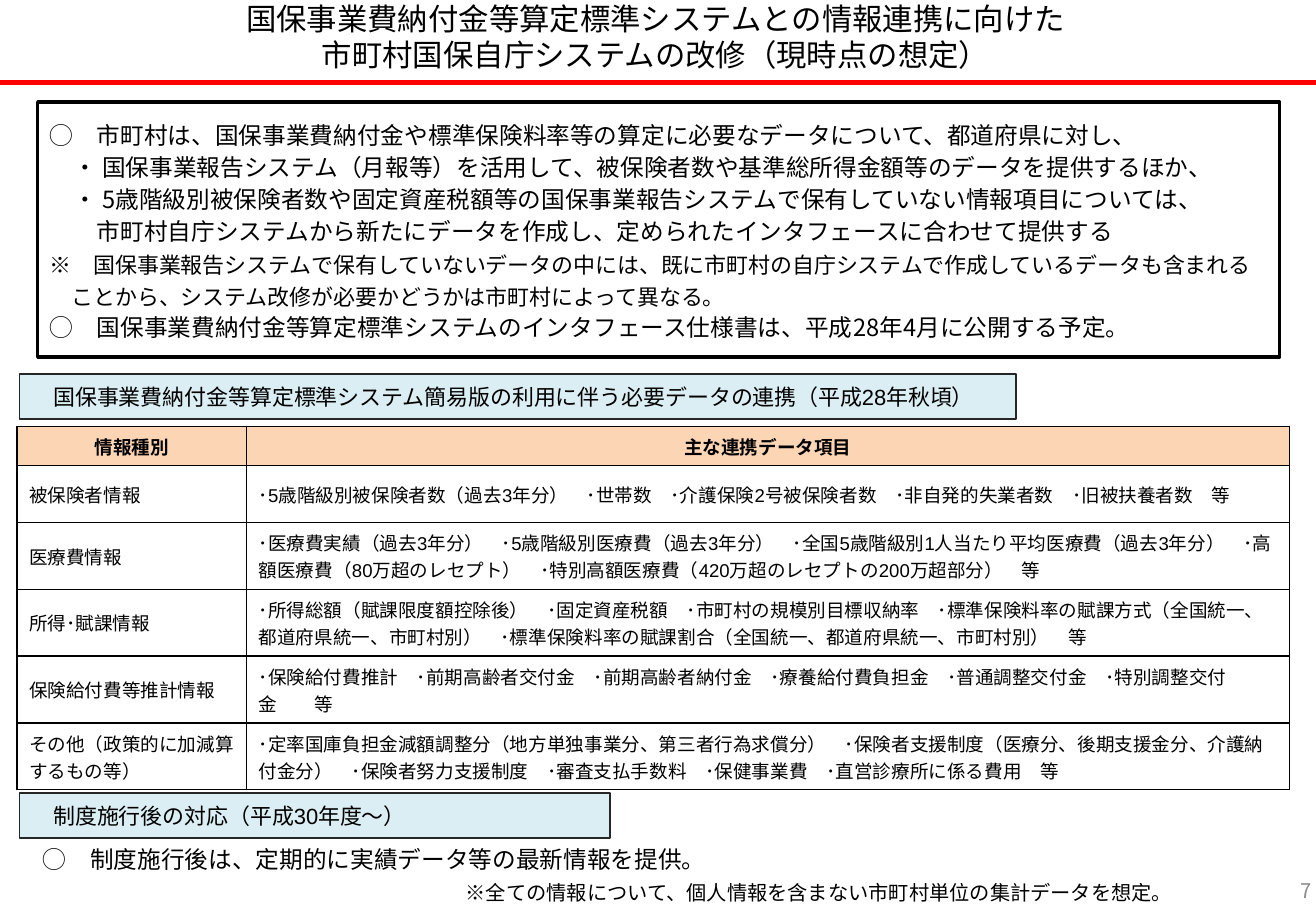
from lxml.etree import SubElement
from pptx import Presentation
from pptx.dml.color import RGBColor as Rgb
from pptx.enum.shapes import MSO_CONNECTOR as Connector, MSO_SHAPE as Shape
from pptx.enum.text import MSO_ANCHOR as Anchor, PP_ALIGN as Align
from pptx.oxml.ns import qn
from pptx.util import Inches, Pt

COLORS = {"black": "000000", "white": "FFFFFF", "red": "FF0000", "dark": "262626",
          "aqua": "DBEEF4", "peach": "FCD5B5", "gray": "8C8C8C"}
GOTHIC = "Noto Sans CJK JP"

SUMMARY = [  # text, size, first-line indent in characters, alignment
    ("◯　市町村は、国保事業費納付金や標準保険料率等の算定に必要なデータについて、都道府県に対し、", 14, 0, Align.LEFT),
    ("・ 国保事業報告システム（月報等）を活用して、被保険者数や基準総所得金額等のデータを提供するほか、", 14, 1, Align.LEFT),
    ("・ 5歳階級別被保険者数や固定資産税額等の国保事業報告システムで保有していない情報項目については、", 14, 1, Align.LEFT),
    ("市町村自庁システムから新たにデータを作成し、定められたインタフェースに合わせて提供する", 14, 2, Align.LEFT),
    ("※　国保事業報告システムで保有していないデータの中には、既に市町村の自庁システムで作成しているデータも含まれる", 13, 0, Align.JUSTIFY),
    ("ことから、システム改修が必要かどうかは市町村によって異なる。", 13, 1, Align.JUSTIFY),
    ("◯　国保事業費納付金等算定標準システムのインタフェース仕様書は、平成28年4月に公開する予定。", 14, 0, Align.JUSTIFY),
]
DATA_ITEMS = [
    ("情報種別", "主な連携データ項目"),
    ("被保険者情報", "･5歳階級別被保険者数（過去3年分）　･世帯数　･介護保険2号被保険者数　･非自発的失業者数　･旧被扶養者数　等"),
    ("医療費情報", "･医療費実績（過去3年分）　･5歳階級別医療費（過去3年分）　･全国5歳階級別1人当たり平均医療費（過去3年分）　･高額医療費（80万超のレセプト）　･特別高額医療費（420万超のレセプトの200万超部分）　等"),
    ("所得･賦課情報", "･所得総額（賦課限度額控除後）　･固定資産税額　･市町村の規模別目標収納率　･標準保険料率の賦課方式（全国統一、都道府県統一、市町村別）　･標準保険料率の賦課割合（全国統一、都道府県統一、市町村別）　等"),
    ("保険給付費等推計情報", "･保険給付費推計　･前期高齢者交付金　･前期高齢者納付金　･療養給付費負担金　･普通調整交付金　･特別調整交付金　　等"),
    ("その他（政策的に加減算するもの等）", "･定率国庫負担金減額調整分（地方単独事業分、第三者行為求償分）　･保険者支援制度（医療分、後期支援金分、介護納付金分）　･保険者努力支援制度　･審査支払手数料　･保健事業費　･直営診療所に係る費用　等"),
]


def write(paragraph, text, size=14, font=GOTHIC, asian_font=None, color="black",
          bold=False, align=Align.LEFT, indent=0, spacing=None):
    """Add formatted text; indent counts characters on the first line."""
    paragraph.alignment = align
    paragraph.line_spacing = Pt(spacing) if spacing else 1.0
    paragraph.space_before = Pt(0)
    properties = paragraph._p.get_or_add_pPr()
    properties.set("marL", "0")
    properties.set("indent", str(Pt(size * indent)))
    run = paragraph.add_run()
    run.text = text
    run.font.size, run.font.bold, run.font.name = Pt(size), bold, font
    run.font.color.rgb = Rgb.from_string(COLORS[color])
    SubElement(run._r.get_or_add_rPr(), qn("a:ea"), typeface=asian_font or font)


class SlideBuilder:
    def __init__(self, presentation):
        self.slide = presentation.slides.add_slide(presentation.slide_layouts[5])

    def fill(self, target, color):
        target.fill.solid()
        target.fill.fore_color.rgb = Rgb.from_string(COLORS[color])

    def title(self, lines, position, **style):
        shape = self.slide.shapes.title
        shape.left, shape.top, shape.width, shape.height = map(Inches, position)
        self.fill_frame(shape.text_frame, lines, Anchor.MIDDLE, **style)
        shape.text_frame.word_wrap = False

    def fill_frame(self, frame, lines, anchor, **style):
        frame.word_wrap = True
        frame.vertical_anchor = anchor
        for index, line in enumerate(lines):
            paragraph = frame.add_paragraph() if index else frame.paragraphs[0]
            write(paragraph, line, **style)

    def text(self, text, position, anchor=Anchor.TOP, **style):
        shape = self.slide.shapes.add_textbox(*map(Inches, position))
        self.fill_frame(shape.text_frame, [text], anchor, **style)

    def box(self, position, fill, line, width):
        shape = self.slide.shapes.add_shape(Shape.RECTANGLE, *map(Inches, position))
        shape.shadow.inherit = False
        self.fill(shape, fill)
        shape.line.color.rgb = Rgb.from_string(COLORS[line])
        shape.line.width = Pt(width)
        shape.text_frame.word_wrap = True
        shape.text_frame.vertical_anchor = Anchor.MIDDLE
        return shape.text_frame

    def heading(self, text, position):
        frame = self.box(position, "aqua", "dark", 1)
        write(frame.paragraphs[0], text, size=13, font="Arial", indent=1)

    def rule(self, start, end, color, width):
        line = self.slide.shapes.add_connector(Connector.STRAIGHT, *map(Inches, start + end))
        line.line.color.rgb = Rgb.from_string(COLORS[color])
        line.line.width = Pt(width)
        SubElement(line._element.spPr, qn("a:effectLst"))

    def border(self, cell, color="black", width=1):
        properties = cell._tc.get_or_add_tcPr()
        for index, side in enumerate(("lnL", "lnR", "lnT", "lnB")):
            edge = SubElement(properties, qn(f"a:{side}"), w=str(Pt(width)))
            solid = SubElement(edge, qn("a:solidFill"))
            SubElement(solid, qn("a:srgbClr"), val=COLORS[color])
            properties.insert(index, edge)

    def table(self, rows, position, widths, heights):
        frame = self.slide.shapes.add_table(len(rows), len(widths), *map(Inches, position))
        table = frame.table
        for column, width in zip(table.columns, widths):
            column.width = Inches(width)
        for row_index, (values, height) in enumerate(zip(rows, heights)):
            table.rows[row_index].height = Inches(height)
            header = row_index == 0
            font = "Arial" if 1 <= row_index <= 3 else "Calibri"
            for column_index, value in enumerate(values):
                cell = table.cell(row_index, column_index)
                self.fill(cell, "peach" if header else "white")
                self.border(cell)
                cell.vertical_anchor = Anchor.TOP if header else Anchor.MIDDLE
                write(cell.text_frame.paragraphs[0], value, size=11, font=font,
                      asian_font=GOTHIC, bold=header,
                      align=Align.CENTER if header else Align.LEFT)


def main():
    presentation = Presentation()
    presentation.slide_width, presentation.slide_height = Inches(10.83), Inches(7.5)
    builder = SlideBuilder(presentation)

    # Title and red rule
    builder.title(["国保事業費納付金等算定標準システムとの情報連携に向けた",
                   "市町村国保自庁システムの改修（現時点の想定）"],
                  (-0.02, 0.01, 10.83, 0.58), size=18, align=Align.CENTER)
    builder.rule((0, 0.68), (10.83, 0.68), "red", 3)

    # Summary box
    summary = builder.box((0.31, 0.84, 10.22, 2.1), "white", "black", 2)
    for index, (text, size, indent, align) in enumerate(SUMMARY):
        paragraph = summary.add_paragraph() if index else summary.paragraphs[0]
        write(paragraph, text, size=size, indent=indent, align=align, spacing=19)

    # Data needed for the simplified system
    builder.heading("国保事業費納付金等算定標準システム簡易版の利用に伴う必要データの連携（平成28年秋頃）",
                    (0.16, 3.08, 8.2, 0.37))
    builder.table(DATA_ITEMS, (0.14, 3.51, 10.47, 2.91), (1.89, 8.58),
                  [0.32, 0.47] + [0.55] * 4)

    # After the reform takes effect
    builder.heading("制度施行後の対応（平成30年度～）", (0.16, 6.53, 4.86, 0.37))
    builder.text("◯　制度施行後は、定期的に実績データ等の最新情報を提供。",
                 (0.06, 6.91, 10.54, 0.4), font="Arial", indent=1)

    # Footnote and page number
    builder.text("※全ての情報について、個人情報を含まない市町村単位の集計データを想定。",
                 (0.77, 7.2, 8.98, 0.3), size=12, align=Align.RIGHT)
    builder.text("7", (8.65, 7.13, 2.24, 0.4), Anchor.MIDDLE, size=12, color="gray",
                 align=Align.RIGHT)
    presentation.save("out.pptx")


if __name__ == "__main__":
    main()
